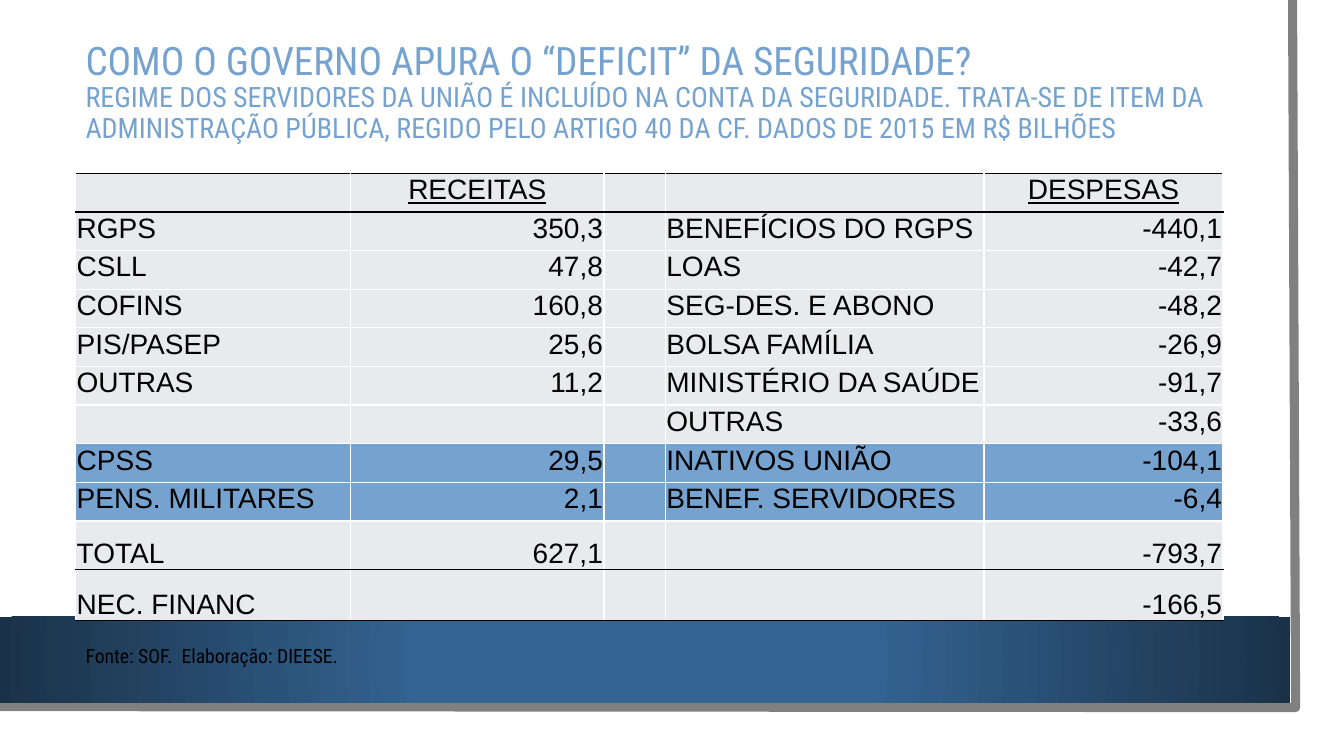
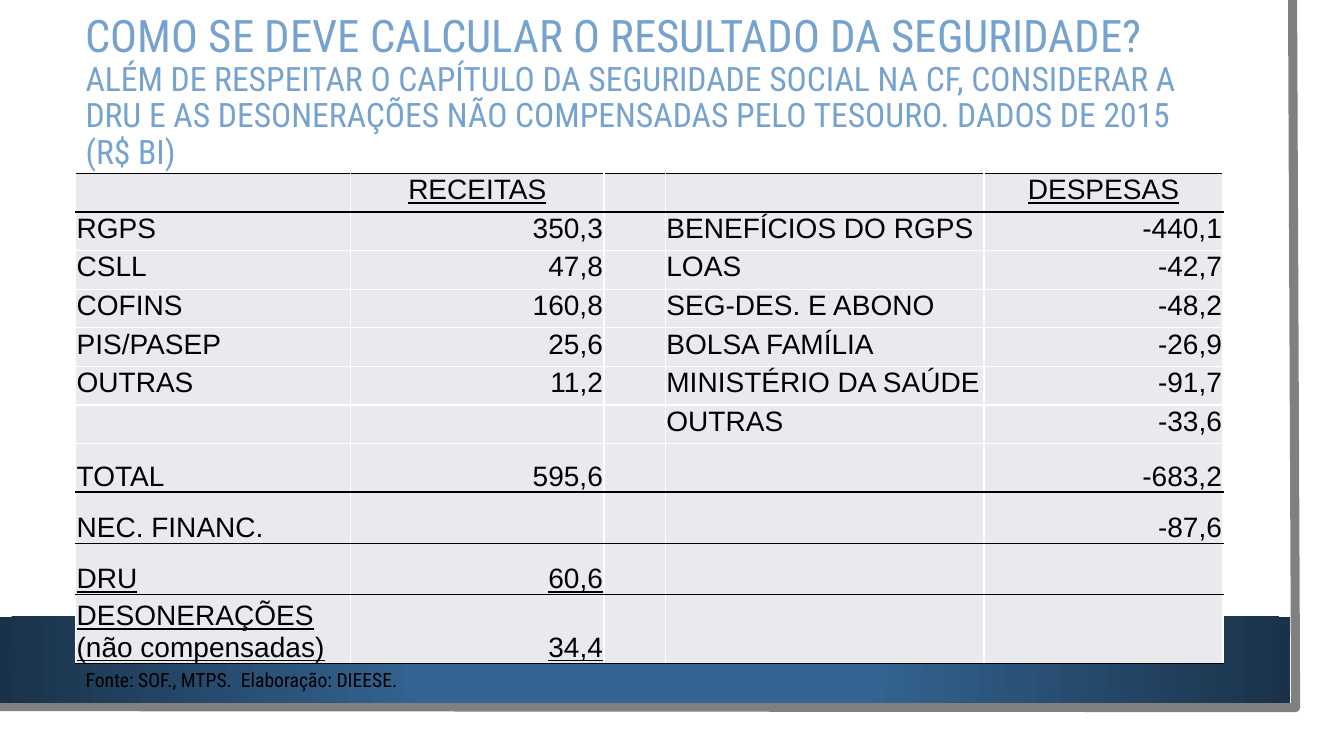
from dataclasses import dataclass

from lxml import etree
from pptx import Presentation
from pptx.dml.color import RGBColor
from pptx.enum import shapes, text
from pptx.oxml.ns import qn
from pptx.util import Inches, Pt

WHITE = RGBColor(0xFF, 0xFF, 0xFF)
BLACK = RGBColor(0, 0, 0)
GREY = RGBColor(0x80, 0x80, 0x80)
SKY = RGBColor(0x75, 0xA2, 0xCE)
PALE = RGBColor(0xE8, 0xEA, 0xEE)
BLUE = RGBColor(0x34, 0x64, 0x92)
NAVY = RGBColor(0x1A, 0x32, 0x49)

HEADING_FONT = "Roboto Condensed"
TABLE_FONT = "Arial"
LEFT = Inches(0.75)
WIDTH = Inches(11.37)
COLUMN_WIDTHS = (2.73, 2.51, 0.61, 3.16, 2.37)
ROW_HEIGHT = Inches(3.45) // 9
TOTAL_HEIGHT = Inches(0.48)
RESULT_HEIGHT = Inches(0.51)

LEFT_ALIGN, CENTER, RIGHT = (
    text.PP_ALIGN.LEFT, text.PP_ALIGN.CENTER, text.PP_ALIGN.RIGHT)
COLUMN_ALIGNS = (LEFT_ALIGN, RIGHT, LEFT_ALIGN, LEFT_ALIGN, RIGHT)


@dataclass
class Row:
    values: tuple
    height: int = ROW_HEIGHT
    fill: RGBColor = PALE
    ruled: bool = False
    underline: bool = False
    anchor: text.MSO_ANCHOR = text.MSO_ANCHOR.TOP
    aligns: tuple = COLUMN_ALIGNS


def summary_row(*values, height=RESULT_HEIGHT, underline=False):
    return Row(values, height, ruled=True, underline=underline,
               anchor=text.MSO_ANCHOR.BOTTOM)


COMMON_ROWS = [
    Row(("", "RECEITAS", "", "", "DESPESAS"), ruled=True, underline=True,
        aligns=(CENTER,) * 5),
    Row(("RGPS", "350,3", "", "BENEFÍCIOS DO RGPS", "-440,1")),
    Row(("CSLL", "47,8", "", "LOAS", "-42,7")),
    Row(("COFINS", "160,8", "", "SEG-DES. E ABONO", "-48,2")),
    Row(("PIS/PASEP", "25,6", "", "BOLSA FAMÍLIA", "-26,9")),
    Row(("OUTRAS", "11,2", "", "MINISTÉRIO DA SAÚDE", "-91,7")),
    Row(("", "", "", "OUTRAS", "-33,6")),
]
GOVERNMENT_ROWS = COMMON_ROWS + [
    Row(("CPSS", "29,5", "", "INATIVOS UNIÃO", "-104,1"), fill=SKY),
    Row(("PENS. MILITARES", "2,1", "", "BENEF. SERVIDORES", "-6,4"), fill=SKY),
    summary_row("TOTAL", "627,1", "", "", "-793,7", height=TOTAL_HEIGHT),
    summary_row("NEC. FINANC", "", "", "", "-166,5"),
]
PROPER_ROWS = COMMON_ROWS + [
    summary_row("TOTAL", "595,6", "", "", "-683,2", height=TOTAL_HEIGHT),
    summary_row("NEC. FINANC.", "", "", "", "-87,6"),
    summary_row("DRU", "60,6", "", "", "", underline=True),
    summary_row("DESONERAÇÕES (não compensadas)", "34,4", "", "", "",
                underline=True),
]


def add_span(para, words, *, size, font=HEADING_FONT, color=BLACK,
             underline=False):
    span = para.add_run()
    span.text = words
    span.font.size = Pt(size)
    span.font.name = font
    span.font.color.rgb = color
    span.font.underline = underline


def add_box(page, top, width, height, anchor=text.MSO_ANCHOR.TOP):
    frame = page.shapes.add_textbox(LEFT, top, width, height).text_frame
    frame.word_wrap = True
    frame.vertical_anchor = anchor
    return frame.paragraphs[0]


def add_frame(page):
    builder = page.shapes.build_freeform(Inches(12.82), 0)
    builder.add_line_segments(
        [(Inches(12.85), Inches(7.02)), (Inches(-0.03), Inches(7.01))],
        close=False)
    edge = builder.convert_to_shape()
    edge.shadow.inherit = False
    edge.fill.background()
    edge.line.color.rgb = GREY
    edge.line.width = Pt(6.5)

    band = page.shapes.add_shape(shapes.MSO_SHAPE.RECTANGLE, 0, Inches(6.12),
                                 Inches(12.8), Inches(0.85))
    band.shadow.inherit = False
    band.line.fill.background()
    band.fill.gradient()
    stops = zip(band.fill.gradient_stops, (BLUE, NAVY), (0.34, 1))
    for stop, color, position in stops:
        stop.color.rgb = color
        stop.position = position
    gradient = band._element.spPr.find(qn("a:gradFill"))
    gradient.remove(gradient.find(qn("a:lin")))
    circle = etree.SubElement(gradient, qn("a:path"), path="circle")
    etree.SubElement(circle, qn("a:fillToRect"),
                     dict.fromkeys("ltrb", "50000"))


def add_title(page, question, detail, question_size, detail_size):
    para = add_box(page, Inches(0.29), WIDTH, Inches(1.26),
                   text.MSO_ANCHOR.MIDDLE)
    para.line_spacing = 0.9
    add_span(para, question, size=question_size, color=SKY)
    para.add_line_break()
    add_span(para, detail, size=detail_size, color=SKY)


def add_border(cell, side, color):
    line = etree.SubElement(cell._tc.get_or_add_tcPr(), qn(f"a:ln{side}"),
                            w=str(Pt(1)))
    solid = etree.SubElement(line, qn("a:solidFill"))
    etree.SubElement(solid, qn("a:srgbClr"), val=str(color))


def format_cell(cell, row, words, align, top_color):
    bottom_color = BLACK if row.ruled else WHITE
    sides = {"L": WHITE, "R": WHITE, "T": top_color, "B": bottom_color}
    for side, color in sides.items():
        add_border(cell, side, color)
    cell.fill.solid()
    cell.fill.fore_color.rgb = row.fill
    cell.margin_left = cell.margin_right = cell.margin_top = Inches(0.01)
    cell.margin_bottom = 0
    cell.vertical_anchor = row.anchor
    para = cell.text_frame.paragraphs[0]
    para.alignment = align
    if words:
        add_span(para, words, size=20, font=TABLE_FONT,
                 underline=row.underline)


def add_accounts(page, rows):
    height = sum(row.height for row in rows)
    table = page.shapes.add_table(len(rows), len(COLUMN_WIDTHS), LEFT,
                                  Inches(1.72), WIDTH, height).table
    table.first_row = table.horz_banding = False
    for column, width in zip(table.columns, COLUMN_WIDTHS):
        column.width = Inches(width)
    top_color = BLACK
    for line, row in zip(table.rows, rows):
        line.height = row.height
        for cell, words, align in zip(line.cells, row.values, row.aligns):
            format_cell(cell, row, words, align, top_color)
        top_color = BLACK if row.ruled else WHITE


def add_source(page, words, top):
    para = add_box(page, Inches(top), Inches(4.8), Inches(0.34))
    add_span(para, words, size=14)


def add_page(deck, title, rows, source, source_top):
    page = deck.slides.add_slide(deck.slide_layouts[6])
    add_frame(page)
    add_title(page, *title)
    add_accounts(page, rows)
    add_source(page, source, source_top)


def main():
    deck = Presentation()
    deck.slide_width = Inches(13.33)
    deck.slide_height = Inches(7.5)
    add_page(
        deck,
        ("COMO O GOVERNO APURA O “DEFICIT” DA SEGURIDADE?",
         "REGIME DOS SERVIDORES DA UNIÃO É INCLUÍDO NA CONTA DA SEGURIDADE. "
         "TRATA-SE DE ITEM DA ADMINISTRAÇÃO PÚBLICA, REGIDO PELO ARTIGO 40 "
         "DA CF. DADOS DE 2015 EM R$ BILHÕES", 28, 20),
        GOVERNMENT_ROWS, "Fonte: SOF.  Elaboração: DIEESE.", 6.34)
    add_page(
        deck,
        ("COMO SE DEVE CALCULAR O RESULTADO DA SEGURIDADE?",
         "ALÉM DE RESPEITAR O CAPÍTULO DA SEGURIDADE SOCIAL NA CF, CONSIDERAR "
         "A DRU E AS DESONERAÇÕES NÃO COMPENSADAS PELO TESOURO. DADOS DE 2015 "
         "(R$ BI)", 32, 24),
        PROPER_ROWS, "Fonte: SOF., MTPS.  Elaboração: DIEESE.", 6.58)
    deck.save("out.pptx")


if __name__ == "__main__":
    main()
